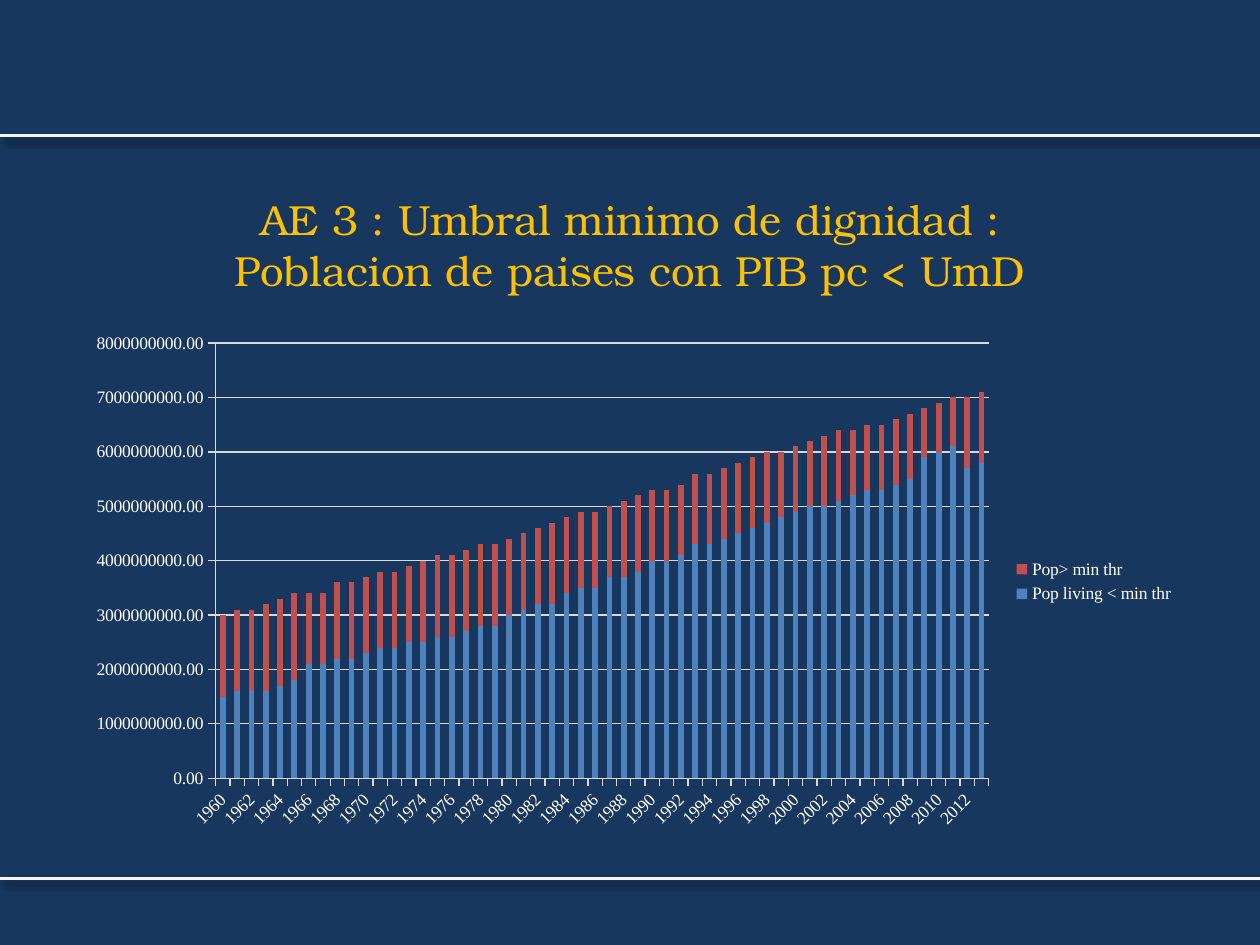
from lxml import etree
from pptx import Presentation
from pptx.chart.data import CategoryChartData
from pptx.dml.color import RGBColor
from pptx.enum.chart import XL_CHART_TYPE, XL_LEGEND_POSITION, XL_TICK_MARK
from pptx.enum.shapes import MSO_CONNECTOR
from pptx.enum.text import MSO_ANCHOR, PP_ALIGN
from pptx.oxml import parse_xml
from pptx.oxml.ns import nsdecls, qn
from pptx.util import Inches, Pt

COLORS = {
    "background": "17375E",
    "rule": "F5F4ED",
    "title": "FFC000",
    "text": "FFFFFF",
    "grid": "D9D9D9",
    "below": "4F81BD",
    "above": "C0504D",
}

# Population in hundreds of millions, one value per year
UNIT = 100_000_000
FIRST_YEAR = 1960
BELOW_THRESHOLD = [
    15, 16, 16, 16, 17, 18, 21, 21, 22, 22, 23, 24, 24, 25, 25, 26, 26, 27,
    28, 28, 30, 31, 32, 32, 34, 35, 35, 37, 37, 38, 40, 40, 41, 43, 43, 44,
    45, 46, 47, 48, 49, 50, 50, 51, 52, 53, 53, 54, 55, 59, 60, 61, 57, 58,
]
ABOVE_THRESHOLD = [
    15, 15, 15, 16, 16, 16, 13, 13, 14, 14, 14, 14, 14, 14, 15, 15, 15, 15,
    15, 15, 14, 14, 14, 15, 14, 14, 14, 13, 14, 14, 13, 13, 13, 13, 13, 13,
    13, 13, 13, 12, 12, 12, 13, 13, 12, 12, 12, 12, 12, 9, 9, 9, 13, 13,
]


def rgb(name):
    return RGBColor.from_string(COLORS[name])


class Deck:
    """Holds the style and the current slide; lengths are inches."""

    title_font = "TeX Gyre Bonum"
    chart_font = "Times New Roman"

    def __init__(self, width, height):
        self.prs = Presentation()
        self.prs.slide_width = Inches(width)
        self.prs.slide_height = Inches(height)
        self.slide = self.prs.slides.add_slide(self.prs.slide_layouts[6])
        fill = self.slide.background.fill
        fill.solid()
        fill.fore_color.rgb = rgb("background")

    def box(self, left, top, width, height):
        """Turn shares of the slide's size into lengths."""
        w, h = self.prs.slide_width, self.prs.slide_height
        return int(left * w), int(top * h), int(width * w), int(height * h)

    def rule(self, top):
        _, y, right, _ = self.box(0, top, 1, 0)
        line = self.slide.shapes.add_connector(MSO_CONNECTOR.STRAIGHT, 0, y, right, y)
        line.line.color.rgb = rgb("rule")
        line.line.width = Pt(1.75)
        line._element.spPr.append(parse_xml(
            f'<a:effectLst {nsdecls("a")}>'
            f'<a:outerShdw blurRad="{Pt(4)}" dist="{Pt(4)}" dir="{40 * 60000}" rotWithShape="0">'
            '<a:srgbClr val="000000"><a:alpha val="40000"/></a:srgbClr>'
            '</a:outerShdw></a:effectLst>'))

    def title(self, text, *place):
        frame = self.slide.shapes.add_textbox(*self.box(*place)).text_frame
        frame.word_wrap = True
        frame.vertical_anchor = MSO_ANCHOR.MIDDLE
        heading = frame.paragraphs[0]
        heading.text = text
        heading.alignment = PP_ALIGN.CENTER
        for run in heading.runs:
            run.font.size = Pt(24)
            run.font.name = self.title_font
            run.font.color.rgb = rgb("title")

    def stacked_columns(self, categories, series, plot_area, *place):
        data = CategoryChartData(number_format="0.00")
        data.categories = categories
        for name, values, _ in series:
            data.add_series(name, values)
        chart = self.slide.shapes.add_chart(
            XL_CHART_TYPE.COLUMN_STACKED, *self.box(*place), data).chart
        chart.has_title = False
        chart.font.size = Pt(10)
        chart.font.name = self.chart_font
        chart.font.color.rgb = rgb("text")

        # Columns
        plot = chart.plots[0]
        plot.gap_width, plot.overlap, plot.vary_by_categories = 150, 100, False
        for column, (_, _, color) in zip(plot.series, series):
            column.format.fill.solid()
            column.format.fill.fore_color.rgb = rgb(color)

        # Axes
        years, population = chart.category_axis, chart.value_axis
        for axis in (years, population):
            axis.major_tick_mark = XL_TICK_MARK.OUTSIDE
            axis.minor_tick_mark = XL_TICK_MARK.NONE
            axis.format.line.color.rgb = rgb("grid")
            axis.tick_labels.font.size = Pt(10)
            axis.tick_labels.font.color.rgb = rgb("text")
            axis.tick_labels.font.name = self.chart_font
        years._element.find(qn("c:txPr")).find(qn("a:bodyPr")).set("rot", str(-45 * 60000))
        population.minimum_scale, population.maximum_scale = 0, 80 * UNIT
        population.major_unit = 10 * UNIT
        population.has_major_gridlines = True
        population.major_gridlines.format.line.color.rgb = rgb("grid")
        population.tick_labels.number_format = "0.00"
        population.tick_labels.number_format_is_linked = False

        # Legend
        chart.has_legend = True
        chart.legend.position = XL_LEGEND_POSITION.RIGHT
        chart.legend.include_in_layout = False

        # Inner plot area, as shares of the chart
        area = chart._chartSpace.chart.plotArea
        for old in area.findall(qn("c:layout")):
            area.remove(old)
        layout = etree.Element(qn("c:layout"))
        manual = etree.SubElement(layout, qn("c:manualLayout"))
        settings = [("layoutTarget", "inner"), ("xMode", "edge"), ("yMode", "edge")]
        for tag, value in settings + list(zip("xywh", plot_area)):
            etree.SubElement(manual, qn(f"c:{tag}")).set("val", str(value))
        area.insert(0, layout)


def main():
    deck = Deck(10, 7.5)

    # Header and footer rules
    for top in (0.93, 0.143):
        deck.rule(top)

    deck.title("AE 3 : Umbral minimo de dignidad :\vPoblacion de paises con PIB pc < UmD",
               0.05, 0.175, 0.9, 0.167)

    # Population on each side of the threshold
    years = [str(FIRST_YEAR + i) for i in range(len(BELOW_THRESHOLD))]
    series = [
        ("Pop living < min thr", [v * UNIT for v in BELOW_THRESHOLD], "below"),
        ("Pop> min thr", [v * UNIT for v in ABOVE_THRESHOLD], "above"),
    ]
    deck.stacked_columns(years, series, (0.127, 0.037, 0.695, 0.845),
                         0.059, 0.343, 0.883, 0.545)

    deck.prs.save("out.pptx")


if __name__ == "__main__":
    main()
